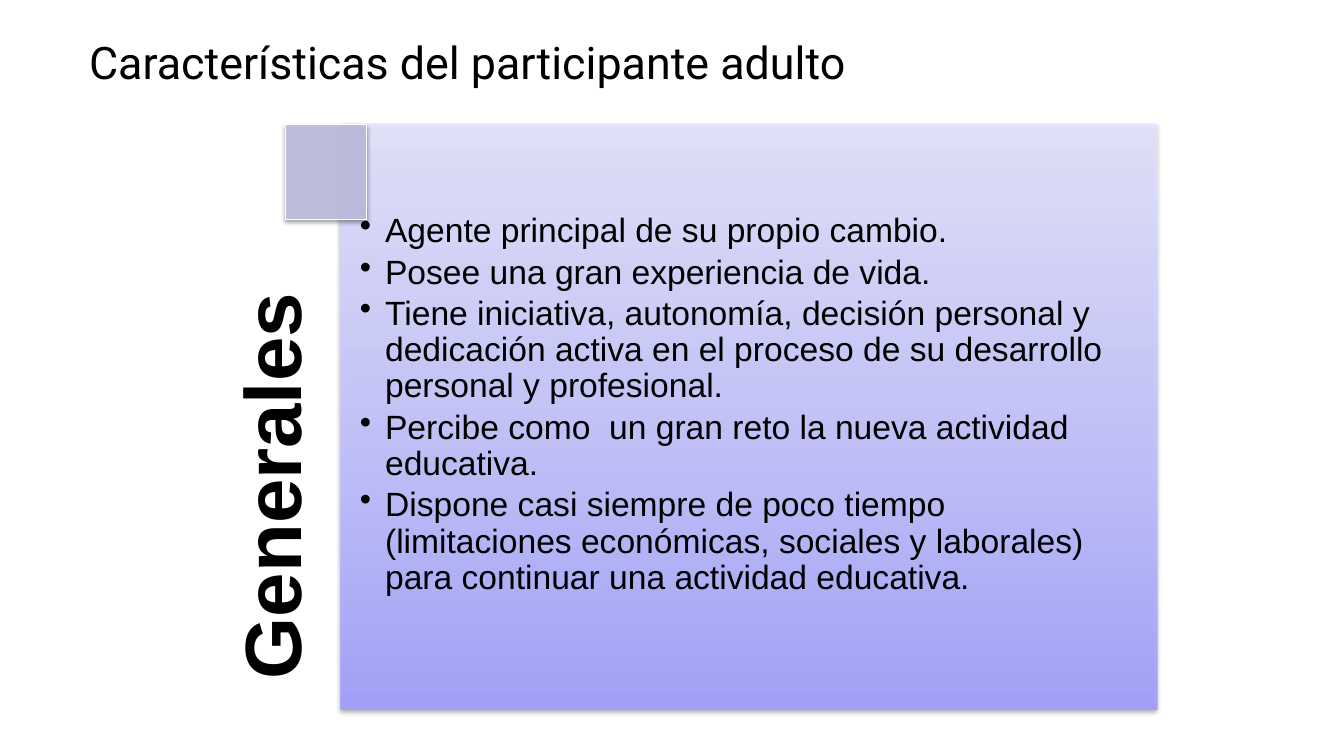
from lxml import etree
from pptx import Presentation
from pptx.dml.color import RGBColor
from pptx.enum.shapes import MSO_SHAPE
from pptx.enum.text import MSO_ANCHOR, PP_ALIGN
from pptx.oxml.ns import qn
from pptx.util import Pt

RECT = MSO_SHAPE.RECTANGLE
TOP, MIDDLE = MSO_ANCHOR.TOP, MSO_ANCHOR.MIDDLE
LEFT, CENTER, RIGHT = PP_ALIGN.LEFT, PP_ALIGN.CENTER, PP_ALIGN.RIGHT

BLACK = RGBColor(0x00, 0x00, 0x00)
WHITE = RGBColor(0xFF, 0xFF, 0xFF)
DEEP = RGBColor(0x9F, 0x9F, 0xFF)
MID = RGBColor(0xBB, 0xBB, 0xFF)
PALE = RGBColor(0xE5, 0xE5, 0xFF)
MAUVE = RGBColor(0xBE, 0xBE, 0xE0)

TRAITS = [
    "Agente principal de su propio cambio.",
    "Posee una gran experiencia de vida.",
    "Tiene iniciativa, autonomía, decisión personal y dedicación activa "
    "en el proceso de su desarrollo personal y profesional.",
    "Percibe como  un gran reto la nueva actividad educativa.",
    "Dispone casi siempre de poco tiempo (limitaciones económicas, "
    "sociales y laborales) para continuar una actividad educativa.",
]


def add(parent, tag, **attrs):
    """Append a drawing element with the given attributes."""
    node = etree.SubElement(parent, qn(tag))
    for name, value in attrs.items():
        node.set(name, str(value))
    return node


class Deck:
    font = "Arial"
    alpha = 90000
    indent = 18

    def __init__(self, width, height):
        self.prs = Presentation()
        self.prs.slide_width, self.prs.slide_height = Pt(width), Pt(height)
        self.slide = self.prs.slides.add_slide(self.prs.slide_layouts[6])

    def tint(self, parent, color, alpha):
        add(add(parent, "a:srgbClr", val=color), "a:alpha", val=alpha)

    def panel(self, box, stops, line=None):
        """Translucent, shadowed rectangle; stops run from bottom to top."""
        shape = self.slide.shapes.add_shape(RECT, *map(Pt, box))
        if line is None:
            shape.line.fill.background()
        else:
            shape.line.color.rgb = line
            shape.line.width = Pt(0.75)

        props = shape._element.spPr
        if len(stops) == 1:
            fill = etree.Element(qn("a:solidFill"))
            self.tint(fill, stops[0][1], self.alpha)
        else:
            fill = etree.Element(qn("a:gradFill"))
            marks = add(fill, "a:gsLst")
            for pos, color in stops:
                self.tint(add(marks, "a:gs", pos=pos * 1000), color, self.alpha)
            add(fill, "a:lin", ang=270 * 60000, scaled=0)
        props.find(qn("a:prstGeom")).addnext(fill)

        shape.shadow.inherit = False
        shade = add(props.find(qn("a:effectLst")), "a:outerShdw",
                    blurRad=Pt(3.1), dist=Pt(1.6), dir=90 * 60000, rotWithShape=0)
        self.tint(shade, BLACK, 38000)

    def text(self, box, lines, size, inset=(0, 0, 0, 0), font=None, bold=False,
             align=LEFT, anchor=TOP, pitch=0.9, after=0, turn=0, bullet=None):
        shape = self.slide.shapes.add_textbox(*map(Pt, box))
        shape.rotation = turn
        frame = shape.text_frame
        frame.word_wrap = True
        frame.vertical_anchor = anchor
        (frame.margin_left, frame.margin_top,
         frame.margin_right, frame.margin_bottom) = map(Pt, inset)
        for i, line in enumerate(lines):
            para = frame.add_paragraph() if i else frame.paragraphs[0]
            para.alignment = align
            para.line_spacing = pitch
            para.space_after = Pt(after)
            if bullet:
                props = para._p.get_or_add_pPr()
                props.set("marL", str(Pt(self.indent)))
                props.set("indent", str(-Pt(self.indent)))
                add(props, "a:buChar", char=bullet)
            run = para.add_run()
            run.text = line
            run.font.name = font or self.font
            run.font.size = Pt(size)
            run.font.bold = bold
            run.font.color.rgb = BLACK


def main():
    deck = Deck(960, 540)

    # Title
    deck.text((38.2, 14.4, 591.8, 66.2), ["Características del participante adulto"],
              32, inset=(7.2, 3.6, 7.2, 3.6), font="Roboto", align=CENTER,
              anchor=MIDDLE, pitch=0.8)

    # Vertical heading
    deck.text((32.4, 280, 340, 72), ["Generales"], 57, inset=(0, 0, 63.4, 0),
              bold=True, align=RIGHT, turn=270)

    # Main panel with its list
    body = (243.4, 89.3, 583.2, 417.6)
    deck.panel(body, [(0, DEEP), (35, MID), (100, PALE)])
    deck.text(body, TRAITS, 24, inset=(13.7, 63.4, 13.7, 13.7), after=3.6, bullet="•")

    # Corner square
    deck.panel((203.8, 89.3, 58.3, 67.7), [(0, MAUVE)], line=WHITE)

    deck.prs.save("out.pptx")


if __name__ == "__main__":
    main()
